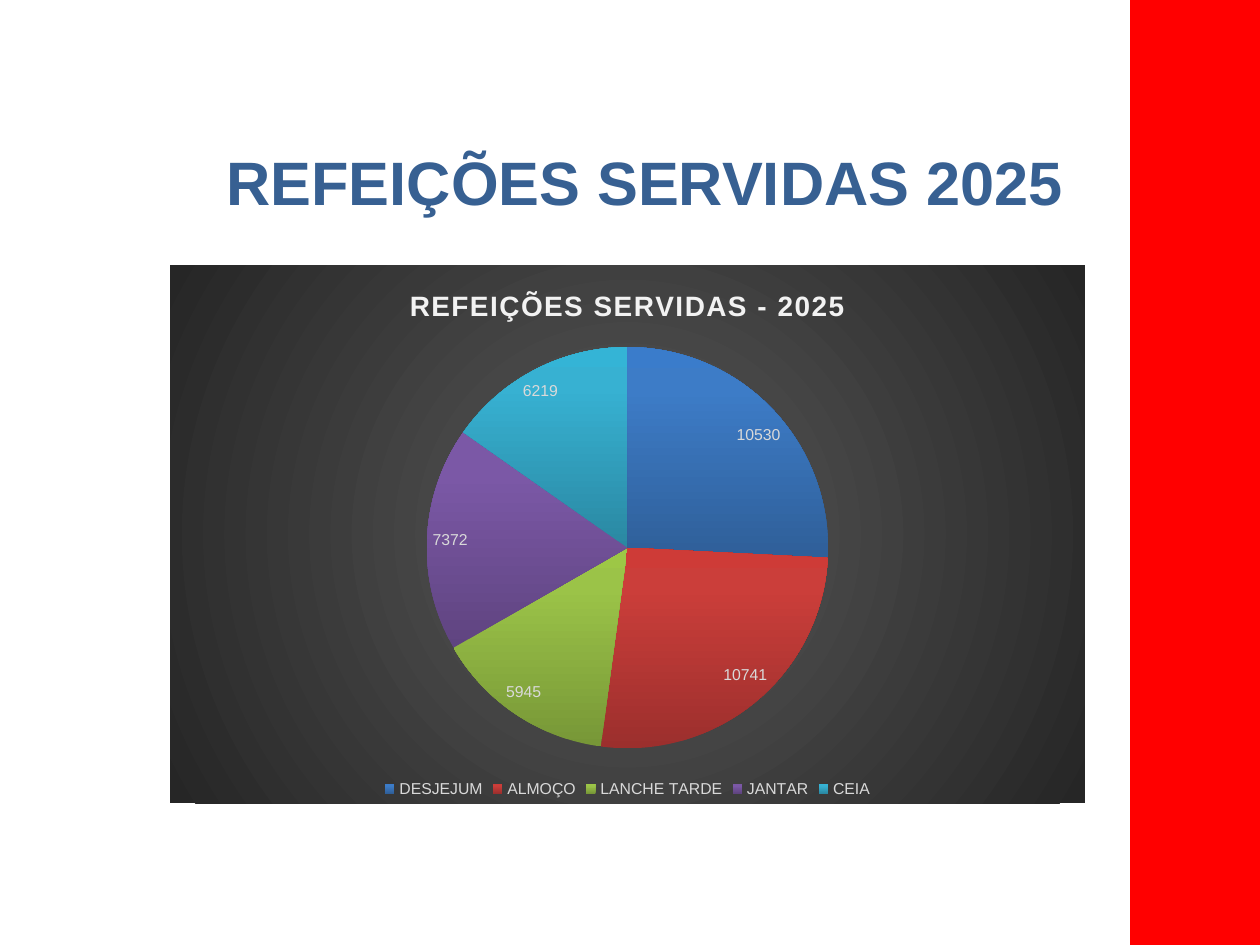
from dataclasses import dataclass

from lxml import etree
from pptx import Presentation
from pptx.chart.data import CategoryChartData
from pptx.dml.color import RGBColor
from pptx.enum.chart import XL_CHART_TYPE, XL_LABEL_POSITION, XL_LEGEND_POSITION
from pptx.enum.shapes import MSO_SHAPE
from pptx.enum.text import MSO_ANCHOR, PP_ALIGN
from pptx.oxml import parse_xml
from pptx.oxml.ns import nsdecls, qn
from pptx.util import Pt

PIE = XL_CHART_TYPE.PIE
BEST_FIT = XL_LABEL_POSITION.BEST_FIT
BOTTOM = XL_LEGEND_POSITION.BOTTOM
RECTANGLE = MSO_SHAPE.RECTANGLE
TOP = MSO_ANCHOR.TOP
CENTER = PP_ALIGN.CENTER


@dataclass(frozen=True)
class Theme:
    font: str = "Arial"
    band: str = "FF0000"
    heading: str = "376092"
    chart_title: str = "F2F2F2"
    chart_text: str = "D9D9D9"
    heading_size: int = 35
    chart_title_size: int = 16
    chart_text_size: int = 9
    backdrop: tuple = ((0, "595959"), (100, "262626"))


THEME = Theme()

MEALS = [
    ("DESJEJUM", 10530, ("2F5F99", "3D7CC7", "3A7CCB")),
    ("ALMOÇO", 10741, ("9C2F2D", "CB3E3A", "CE3B37")),
    ("LANCHE TARDE", 5945, ("779737", "9BC348", "9DC746")),
    ("JANTAR", 7372, ("5F4480", "7B58A6", "7C57A8")),
    ("CEIA", 6219, ("2A88A2", "37B1D2", "34B4D6")),
]
SLICE_STOPS = (0, 80, 100)
UPWARD = '<a:lin ang="16200000" scaled="0"/>'
RADIAL = (
    '<a:path path="circle">'
    '<a:fillToRect l="50000" t="50000" r="50000" b="50000"/></a:path>'
)


def style_font(font, size, color, bold=False):
    font.name = THEME.font
    font.size = Pt(size)
    font.bold = bold
    font.color.rgb = RGBColor.from_string(color)


def gradient(stops, direction):
    marks = "".join(
        f'<a:gs pos="{position * 1000}"><a:srgbClr val="{color}"/></a:gs>'
        for position, color in stops
    )
    return parse_xml(
        f'<a:gradFill {nsdecls("a")} rotWithShape="1">'
        f"<a:gsLst>{marks}</a:gsLst>{direction}</a:gradFill>"
    )


def add_band(page, left, top, width, height):
    band = page.shapes.add_shape(RECTANGLE, Pt(left), Pt(top), Pt(width), Pt(height))
    band.shadow.inherit = False
    band.fill.solid()
    band.fill.fore_color.rgb = RGBColor.from_string(THEME.band)
    band.line.color.rgb = RGBColor.from_string(THEME.band)
    band.line.width = Pt(2)


def add_text(page, text, *, left, top, width, height, size, color, bold=False):
    box = page.shapes.add_textbox(Pt(left), Pt(top), Pt(width), Pt(height))
    frame = box.text_frame
    frame.word_wrap = True
    frame.vertical_anchor = TOP
    frame.margin_top = Pt(6.5)
    para = frame.paragraphs[0]
    para.alignment = CENTER
    para.line_spacing = 0.9
    span = para.add_run()
    span.text = text
    style_font(span.font, size, color, bold)


def title_chart(chart, text):
    para = chart.chart_title.text_frame.paragraphs[0]
    span = para.add_run()
    span.text = text
    style_font(span.font, THEME.chart_title_size, THEME.chart_title, bold=True)
    span.font._element.set("spc", "100")
    chart.chart_title.include_in_layout = False


def fill_backdrop(chart):
    space = chart._chartSpace
    properties = etree.Element(qn("c:spPr"))
    properties.append(gradient(THEME.backdrop, RADIAL))
    properties.append(parse_xml(f'<a:ln {nsdecls("a")}><a:noFill/></a:ln>'))
    space.find(qn("c:chart")).addnext(properties)


def fill_slices(series):
    for index, (_, _, colors) in enumerate(MEALS):
        look = series.points[index].format
        look.line.fill.background()
        properties = look._element.get_or_add_spPr()
        properties.insert(0, gradient(zip(SLICE_STOPS, colors), UPWARD))


def add_pie(page, title, left, top, width, height):
    data = CategoryChartData()
    data.categories = [name for name, _, _ in MEALS]
    data.add_series("Series 1", [count for _, count, _ in MEALS])
    chart = page.shapes.add_chart(
        PIE, Pt(left), Pt(top), Pt(width), Pt(height), data
    ).chart
    style_font(chart.font, THEME.chart_text_size, THEME.chart_text)
    title_chart(chart, title)
    fill_backdrop(chart)

    chart.has_legend = True
    chart.legend.position = BOTTOM
    chart.legend.include_in_layout = False
    style_font(chart.legend.font, THEME.chart_text_size, THEME.chart_text)

    plot = chart.plots[0]
    plot.vary_by_categories = True
    fill_slices(plot.series[0])
    labels = plot.series[0].data_labels
    labels.show_value = True
    labels.position = BEST_FIT
    style_font(labels.font, THEME.chart_text_size, THEME.chart_text)


def main():
    deck = Presentation()
    deck.slide_width, deck.slide_height = Pt(720), Pt(540)
    page = deck.slides.add_slide(deck.slide_layouts[6])
    add_band(page, 646.5, 0, 90, 540)
    add_text(
        page, "REFEIÇÕES SERVIDAS 2025",
        left=107.3, top=80.6, width=522.7, height=62.6,
        size=THEME.heading_size, color=THEME.heading, bold=True,
    )
    add_pie(page, "REFEIÇÕES SERVIDAS - 2025", 97.2, 151.6, 522.7, 307.4)
    deck.save("out.pptx")


if __name__ == "__main__":
    main()
